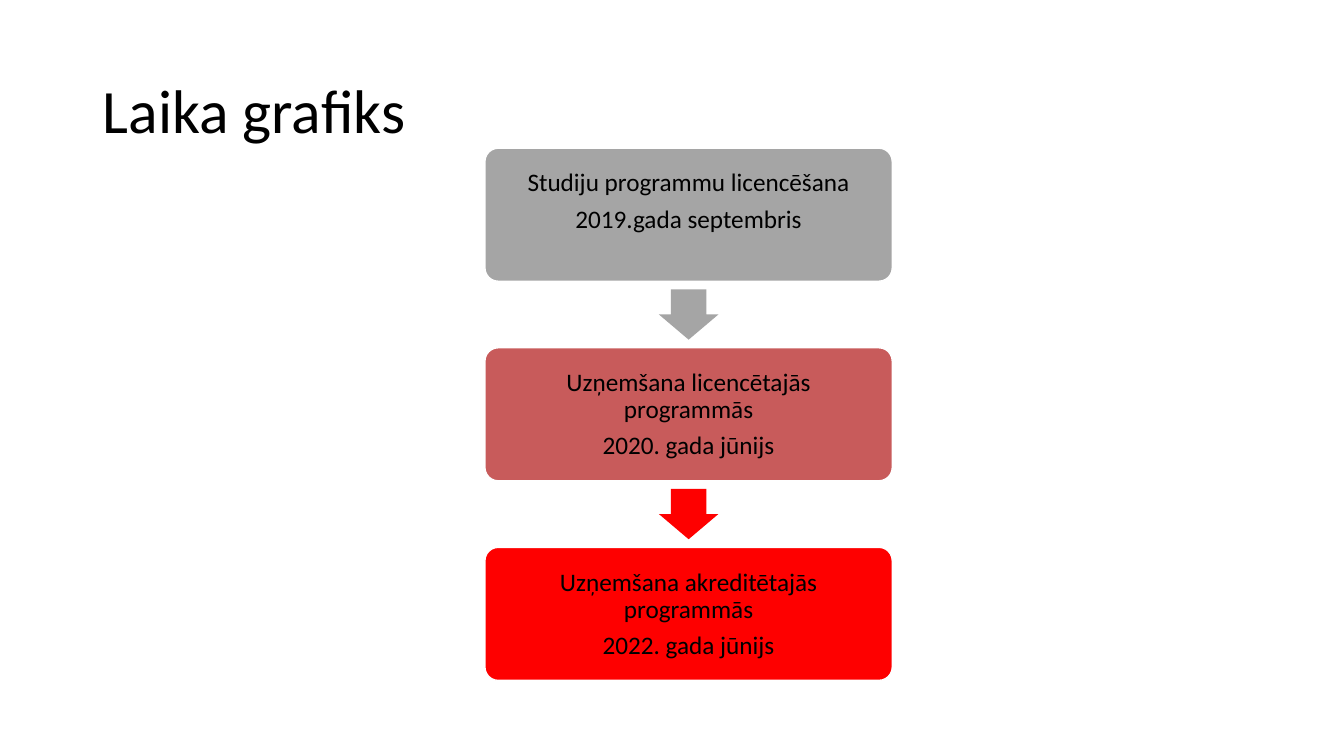
from pptx import Presentation
from pptx.dml.color import RGBColor
from pptx.enum.shapes import MSO_SHAPE
from pptx.enum.text import MSO_ANCHOR, PP_ALIGN
from pptx.util import Inches, Pt

ROUNDED, DOWN_ARROW = MSO_SHAPE.ROUNDED_RECTANGLE, MSO_SHAPE.DOWN_ARROW
TOP, MIDDLE = MSO_ANCHOR.TOP, MSO_ANCHOR.MIDDLE
LEFT, CENTER = PP_ALIGN.LEFT, PP_ALIGN.CENTER

COLORS = {"text": "000000", "edge": "FFFFFF", "licensing": "A5A5A5",
          "licensed": "C85B5B", "accredited": "FE0000"}
TITLE_ONLY = 5

# Vertical flow, in inches
CENTER_X, FIRST_TOP, PITCH = 6.83, 1.47, 1.98
STAGE_W, STAGE_H = 4.04, 1.32
ARROW_W, ARROW_H = 0.59, 0.5

STAGES = [
    ("licensing", ["Studiju programmu licencēšana", "2019.gada septembris"]),
    ("licensed", ["Uzņemšana licencētajās programmās", "2020. gada jūnijs"]),
    ("accredited", ["Uzņemšana akreditētajās programmās", "2022. gada jūnijs"]),
]
ARROW_COLORS = ["licensing", "accredited"]


def apply(target, values):
    for key, value in values.items():
        setattr(target, key, value)


class TimelineSlide:
    font_name = "Calibri"

    def __init__(self, deck):
        self.slide = deck.slides.add_slide(deck.slide_layouts[TITLE_ONLY])

    def set_lines(self, frame, lines, size, align, gap=0):
        frame.text = "\n".join(lines)
        for index, paragraph in enumerate(frame.paragraphs):
            apply(paragraph, {"alignment": align, "line_spacing": 0.9,
                              "space_before": Pt(gap if index else 0)})
            for run in paragraph.runs:
                apply(run.font, {"name": self.font_name, "size": Pt(size)})
                run.font.color.rgb = RGBColor.from_string(COLORS["text"])

    def title(self, wording, left, top, width, height):
        heading = self.slide.shapes.title
        apply(heading, {"left": Inches(left), "top": Inches(top),
                        "width": Inches(width), "height": Inches(height)})
        heading.text_frame.vertical_anchor = MIDDLE
        self.set_lines(heading.text_frame, [wording], 44, LEFT)

    def centered_shape(self, preset, top, width, height, color, adjustments):
        """Add a filled shape on the centre line of the flow."""
        shape = self.slide.shapes.add_shape(
            preset, Inches(CENTER_X - width / 2), Inches(top),
            Inches(width), Inches(height))
        shape.shadow.inherit = False
        shape.fill.solid()
        shape.fill.fore_color.rgb = RGBColor.from_string(COLORS[color])
        shape.line.fill.background()
        for index, value in enumerate(adjustments):
            shape.adjustments[index] = value
        return shape

    def stage(self, top, color, lines):
        box = self.centered_shape(ROUNDED, top, STAGE_W, STAGE_H, color, [0.1])
        box.line.color.rgb = RGBColor.from_string(COLORS["edge"])
        box.line.width = Pt(1)
        apply(box.text_frame, {
            "word_wrap": True, "vertical_anchor": TOP,
            "margin_left": Inches(0.11), "margin_right": Inches(0.11),
            "margin_top": Inches(0.18), "margin_bottom": Inches(0.11)})
        self.set_lines(box.text_frame, lines, 18, CENTER, gap=6.3)

    def arrow(self, top, color):
        self.centered_shape(DOWN_ARROW, top, ARROW_W, ARROW_H, color, [0.6, 0.5])


def main():
    deck = Presentation()
    deck.slide_width, deck.slide_height = Inches(13.33), Inches(7.5)
    timeline = TimelineSlide(deck)
    timeline.title("Laika grafiks", 0.92, 0.4, 11.5, 1.45)
    for row, (color, lines) in enumerate(STAGES):
        timeline.stage(FIRST_TOP + row * PITCH, color, lines)
    arrow_offset = STAGE_H + (PITCH - STAGE_H - ARROW_H) / 2
    for row, color in enumerate(ARROW_COLORS):
        timeline.arrow(FIRST_TOP + row * PITCH + arrow_offset, color)
    deck.save("out.pptx")


if __name__ == "__main__":
    main()
